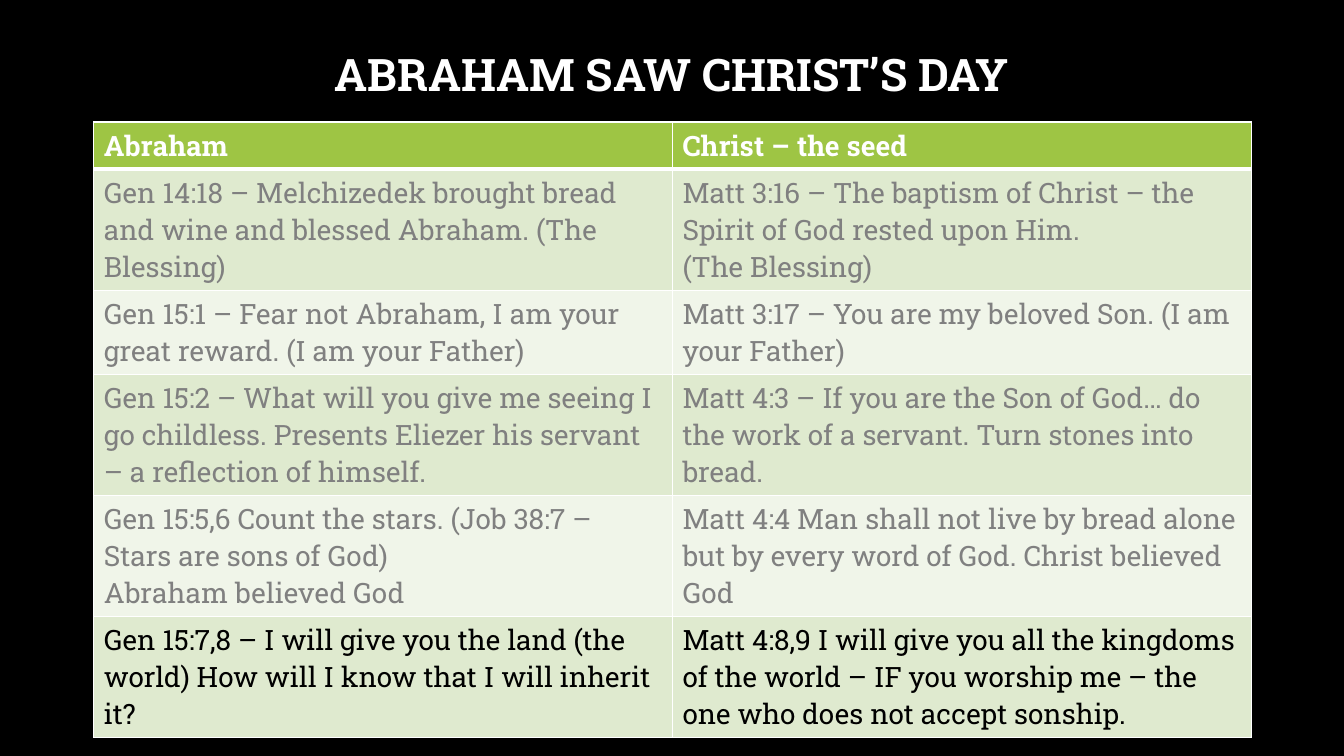
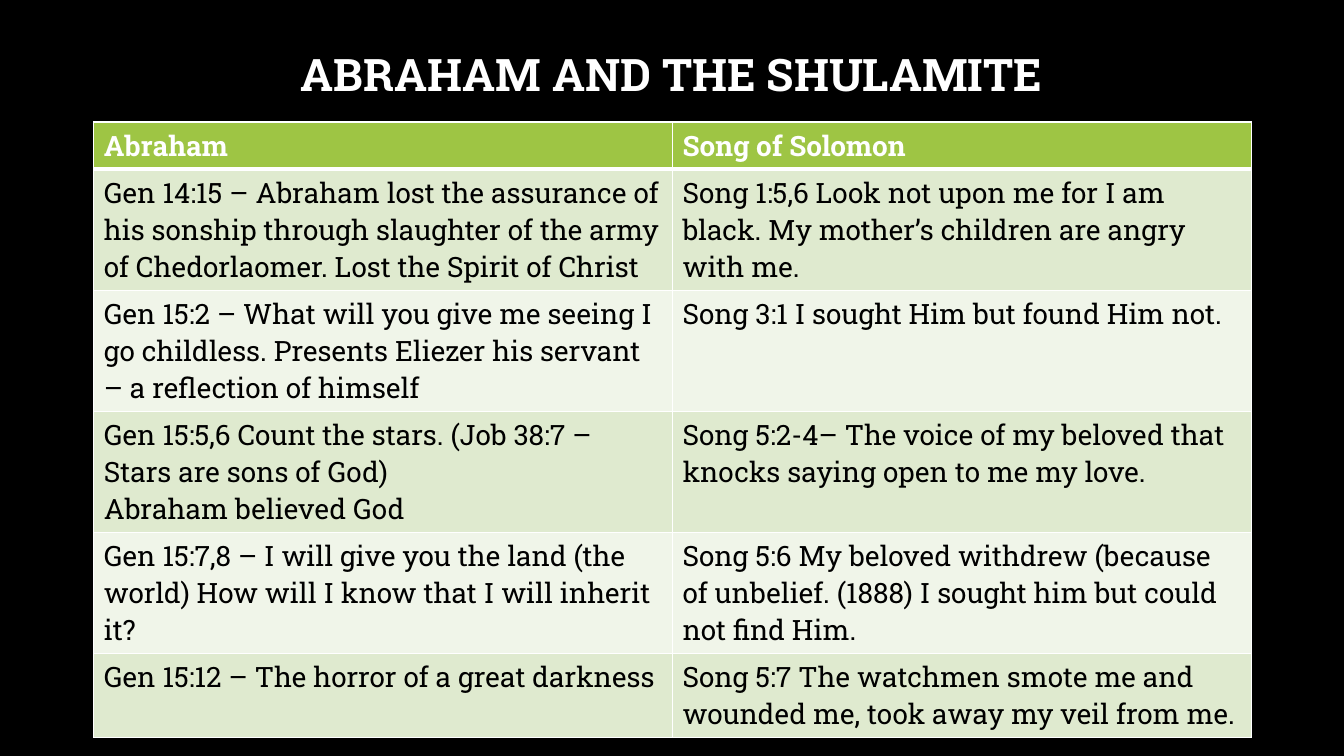
from lxml.etree import SubElement
from pptx import Presentation
from pptx.dml.color import RGBColor
from pptx.enum.text import MSO_ANCHOR, MSO_AUTO_SIZE, PP_ALIGN
from pptx.oxml.ns import qn
from pptx.util import Inches, Pt

BLACK = RGBColor(0x00, 0x00, 0x00)
WHITE = RGBColor(0xFF, 0xFF, 0xFF)
GREY = RGBColor(0x80, 0x80, 0x80)
HEADER_GREEN = RGBColor(0x9E, 0xC5, 0x44)
BAND_GREENS = (RGBColor(0xDF, 0xEA, 0xCF), RGBColor(0xF0, 0xF5, 0xE9))

TITLE_BOX = (Inches(1.36), Inches(0.24), Inches(10.61), Inches(0.81))
TABLE_BOX = (Inches(0.93), Inches(1.21), Inches(11.48), Inches(2.46))

FONT = "Roboto Slab"
TITLE_FONT = {"name": FONT, "size": Pt(32), "bold": True}
HEADER_FONT = {"name": FONT, "size": Pt(20), "bold": True}
VERSE_FONT = {"name": FONT, "size": Pt(20), "bold": False}
TITLE_FRAME = {
    "word_wrap": True,
    "auto_size": MSO_AUTO_SIZE.NONE,
    "vertical_anchor": MSO_ANCHOR.BOTTOM,
}
TITLE_PARAGRAPH = {"alignment": PP_ALIGN.CENTER, "line_spacing": 0.9}

STARS = "Gen 15:5,6 Count the stars. (Job 38:7 – Stars are sons of God)\nAbraham believed God"
CHILDLESS = (
    "Gen 15:2 – What will you give me seeing I go childless. "
    "Presents Eliezer his servant – a reflection of himself"
)
LAND = (
    "Gen 15:7,8 – I will give you the land (the world) "
    "How will I know that I will inherit it?"
)

CHRIST_ROWS = [
    ("Abraham", "Christ – the seed"),
    (
        "Gen 14:18 – Melchizedek brought bread and wine and blessed Abraham. (The Blessing)",
        "Matt 3:16 – The baptism of Christ – the Spirit of God rested upon Him.\n(The Blessing)",
    ),
    (
        "Gen 15:1 – Fear not Abraham, I am your great reward. (I am your Father)",
        "Matt 3:17 – You are my beloved Son. (I am your Father)",
    ),
    (
        CHILDLESS + ".",
        "Matt 4:3 – If you are the Son of God… do the work of a servant. "
        "Turn stones into bread.",
    ),
    (
        STARS,
        "Matt 4:4 Man shall not live by bread alone but by every word of God. "
        "Christ believed God",
    ),
    (
        LAND,
        "Matt 4:8,9 I will give you all the kingdoms of the world – "
        "IF you worship me – the one who does not accept sonship.",
    ),
]

SHULAMITE_ROWS = [
    ("Abraham", "Song of Solomon"),
    (
        "Gen 14:15 – Abraham lost the assurance of his sonship through slaughter "
        "of the army of Chedorlaomer. Lost the Spirit of Christ",
        "Song 1:5,6 Look not upon me for I am black. "
        "My mother’s children are angry with me.",
    ),
    (CHILDLESS, "Song 3:1 I sought Him but found Him not."),
    (STARS, "Song 5:2-4– The voice of my beloved that knocks saying open to me my love."),
    (
        LAND,
        "Song 5:6 My beloved withdrew (because of unbelief. (1888) "
        "I sought him but could not find Him.",
    ),
    (
        "Gen 15:12 – The horror of a great darkness",
        "Song 5:7 The watchmen smote me and wounded me, took away my veil from me.",
    ),
]


def apply_format(target, values):
    for name, value in values.items():
        setattr(target, name, value)


def style_text(text_frame, font_values, color):
    for paragraph in text_frame.paragraphs:
        for run in paragraph.runs:
            apply_format(run.font, font_values)
            run.font.color.rgb = color


def set_borders(cell, top, bottom):
    properties = cell._tc.get_or_add_tcPr()
    for side, width in (("L", 1), ("R", 1), ("T", top), ("B", bottom)):
        border = SubElement(properties, qn(f"a:ln{side}"), w=str(Pt(width)))
        fill = SubElement(border, qn("a:solidFill"))
        SubElement(fill, qn("a:srgbClr"), val=str(WHITE))


def place_title(slide, text, box):
    title = slide.shapes.title
    apply_format(title, dict(zip(("left", "top", "width", "height"), box)))
    frame = title.text_frame
    frame.text = text
    apply_format(frame, TITLE_FRAME)
    apply_format(frame.paragraphs[0], TITLE_PARAGRAPH)
    style_text(frame, TITLE_FONT, WHITE)


def place_comparison(slide, rows, muted_rows, box):
    table = slide.shapes.add_table(len(rows), len(rows[0]), *box).table
    for row_index, texts in enumerate(rows):
        if row_index == 0:
            fill, font, color = HEADER_GREEN, HEADER_FONT, WHITE
        else:
            fill, font = BAND_GREENS[(row_index - 1) % 2], VERSE_FONT
            color = GREY if row_index in muted_rows else BLACK
        for column_index, text in enumerate(texts):
            cell = table.cell(row_index, column_index)
            cell.text = text
            style_text(cell.text_frame, font, color)
            set_borders(
                cell,
                top=3 if row_index == 1 else 1,
                bottom=3 if row_index == 0 else 1,
            )
            cell.fill.solid()
            cell.fill.fore_color.rgb = fill


def add_comparison_slide(presentation, title, rows, muted_rows=()):
    slide = presentation.slides.add_slide(presentation.slide_layouts[5])
    slide.background.fill.solid()
    slide.background.fill.fore_color.rgb = BLACK
    place_title(slide, title, TITLE_BOX)
    place_comparison(slide, rows, muted_rows, TABLE_BOX)


def main():
    presentation = Presentation()
    presentation.slide_width = Inches(13.33)
    presentation.slide_height = Inches(7.5)
    add_comparison_slide(
        presentation, "ABRAHAM SAW CHRIST’S DAY", CHRIST_ROWS, muted_rows=range(1, 5)
    )
    add_comparison_slide(presentation, "ABRAHAM AND THE SHULAMITE", SHULAMITE_ROWS)
    presentation.save("out.pptx")


if __name__ == "__main__":
    main()
